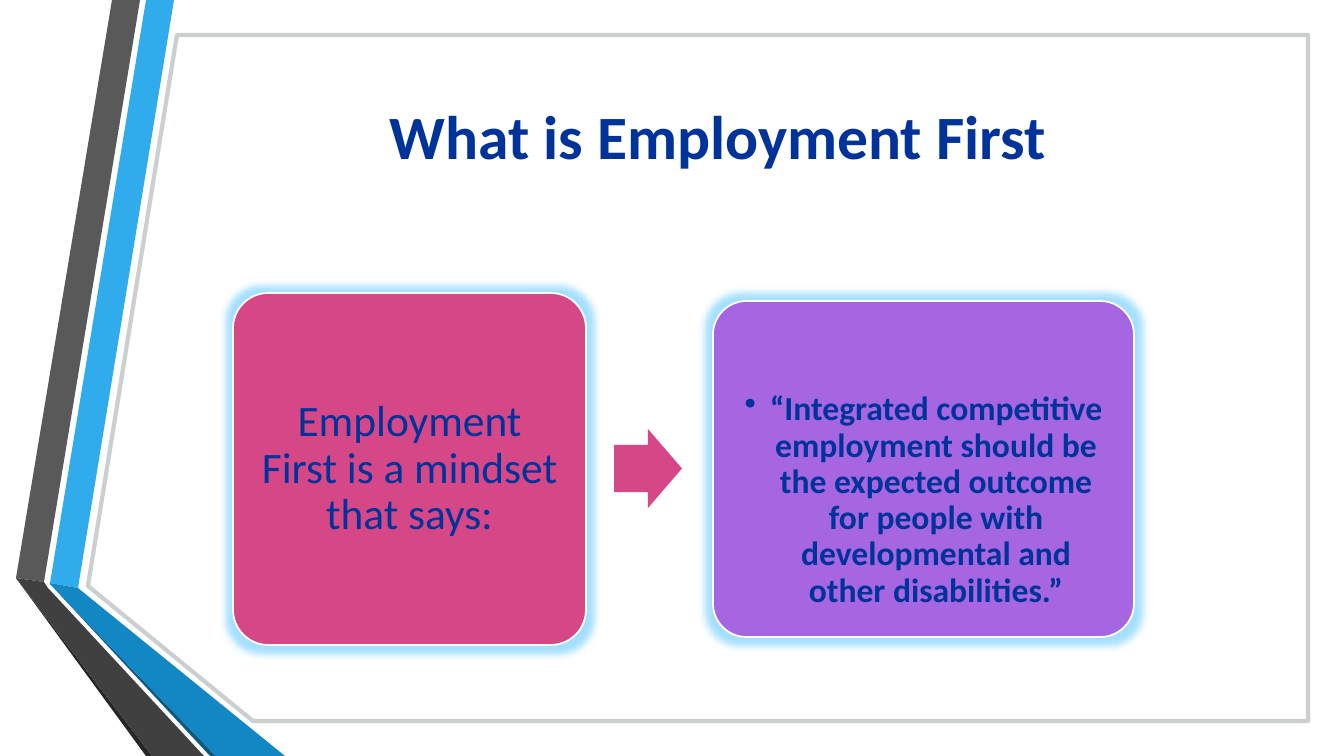
"""Build the Employment First slide."""
import lxml.etree
import pptx
import pptx.dml.color
import pptx.enum.shapes
import pptx.enum.text
import pptx.oxml.ns
import pptx.util

SLIDE_SIZE = (1344, 756)
PX = 914400 / 100.8
FONT, NAVY, WHITE, PINK, PURPLE = "Calibri", "003399", "FFFFFF", "D64787", "A666E1"
GLOW = {"color": "37BAFF", "alpha": 45000, "radius": 15}

RIBBONS = [
    ("30ACEC", [(50, 583), (78, 588), (174, 0), (146, 0)]),
    ("595959", [(140, 0), (112, 0), (16, 578), (44, 582)]),
    ("262626", [(16, 578), (146, 756), (152, 756)]),
    ("0C5A82", [(50, 584), (210, 756), (216, 756)]),
    ("1287C3", [(50, 584), (216, 756), (285, 756), (78, 588), (50, 583)]),
    ("404040", [(204, 756), (48, 588), (44, 582), (16, 578), (152, 756)]),
]
FRAME = [(177, 35), (1308, 35), (1308, 721), (253, 721), (88, 586)]
FRAME_LINE = "CBCFCF"

TITLE = ("What is Employment First", (317, 69, 803, 141))
CARDS = [
    ("Employment First is a mindset that says:", (233, 293, 353, 352), PINK,
     {"size": 31}),
    ("“Integrated competitive employment should be the expected outcome for "
     "people with developmental and other disabilities.”", (713, 301, 421, 336), PURPLE,
     {"size": 24, "bold": True, "bullet": True, "anchor": "TOP", "top": 81}),
]
CARD_MARGIN = 13
ARROW_BOX = (614, 429, 68, 79)


def px(value):
    return pptx.util.Emu(round(value * PX))


def color(value):
    return pptx.dml.color.RGBColor.from_string(value)


def add_element(parent, tag, **attributes):
    element = lxml.etree.SubElement(parent, pptx.oxml.ns.qn(tag))
    for name, value in attributes.items():
        element.set(name, str(value))
    return element


def paint(shape, fill, line=None, width=1.25):
    shape.shadow.inherit = False
    shape.fill.solid()
    shape.fill.fore_color.rgb = color(fill)
    if line:
        shape.line.color.rgb = color(line)
        shape.line.width = pptx.util.Pt(width)
    else:
        shape.line.fill.background()


def add_polygon(slide, points, fill, line=None, width=1.25):
    builder = slide.shapes.build_freeform(*points[0], scale=PX)
    builder.add_line_segments(points[1:], close=True)
    paint(builder.convert_to_shape(), fill, line, width)


def add_preset(slide, kind, box, fill, line=None, adjustments=()):
    shape = slide.shapes.add_shape(kind, *map(px, box))
    for index, value in enumerate(adjustments):
        shape.adjustments[index] = value
    paint(shape, fill, line)
    return shape


def add_glow(shape):
    effects = shape._element.spPr.find(pptx.oxml.ns.qn("a:effectLst"))
    glow = add_element(effects, "a:glow", rad=px(GLOW["radius"]))
    tint = add_element(glow, "a:srgbClr", val=GLOW["color"])
    add_element(tint, "a:alpha", val=GLOW["alpha"])


def write(shape, text, size, bold=False, bullet=False, anchor="MIDDLE", margin=10, top=None):
    frame = shape.text_frame
    frame.word_wrap = True
    frame.vertical_anchor = pptx.enum.text.MSO_ANCHOR[anchor]
    frame.margin_left = frame.margin_right = frame.margin_bottom = px(margin)
    frame.margin_top = px(margin if top is None else top)
    paragraph = frame.paragraphs[0]
    paragraph.alignment = pptx.enum.text.PP_ALIGN.CENTER
    paragraph.line_spacing = 0.9
    if bullet:
        properties = paragraph._p.get_or_add_pPr()
        indent = pptx.util.Inches(0.25)
        properties.set("marL", str(indent))
        properties.set("indent", str(-indent))
        add_element(properties, "a:buChar", char="•")
    run = paragraph.add_run()
    run.text = text
    run.font.name = FONT
    run.font.size = pptx.util.Pt(size)
    run.font.bold = bold
    run.font.color.rgb = color(NAVY)


def main():
    presentation = pptx.Presentation()
    presentation.slide_width, presentation.slide_height = map(px, SLIDE_SIZE)
    slide = presentation.slides.add_slide(presentation.slide_layouts[6])
    shapes = pptx.enum.shapes.MSO_SHAPE

    for fill, points in RIBBONS:
        add_polygon(slide, points, fill)
    add_polygon(slide, FRAME, WHITE, FRAME_LINE, 3)

    title, title_box = TITLE
    write(slide.shapes.add_textbox(*map(px, title_box)), title, size=44, bold=True)

    for text, box, fill, text_format in CARDS:
        card = add_preset(slide, shapes.ROUNDED_RECTANGLE, box, fill, WHITE, [0.1])
        add_glow(card)
        write(card, text, margin=CARD_MARGIN, **text_format)
    add_preset(slide, shapes.RIGHT_ARROW, ARROW_BOX, PINK, adjustments=[0.6, 0.5])

    presentation.save("out.pptx")


if __name__ == "__main__":
    main()
